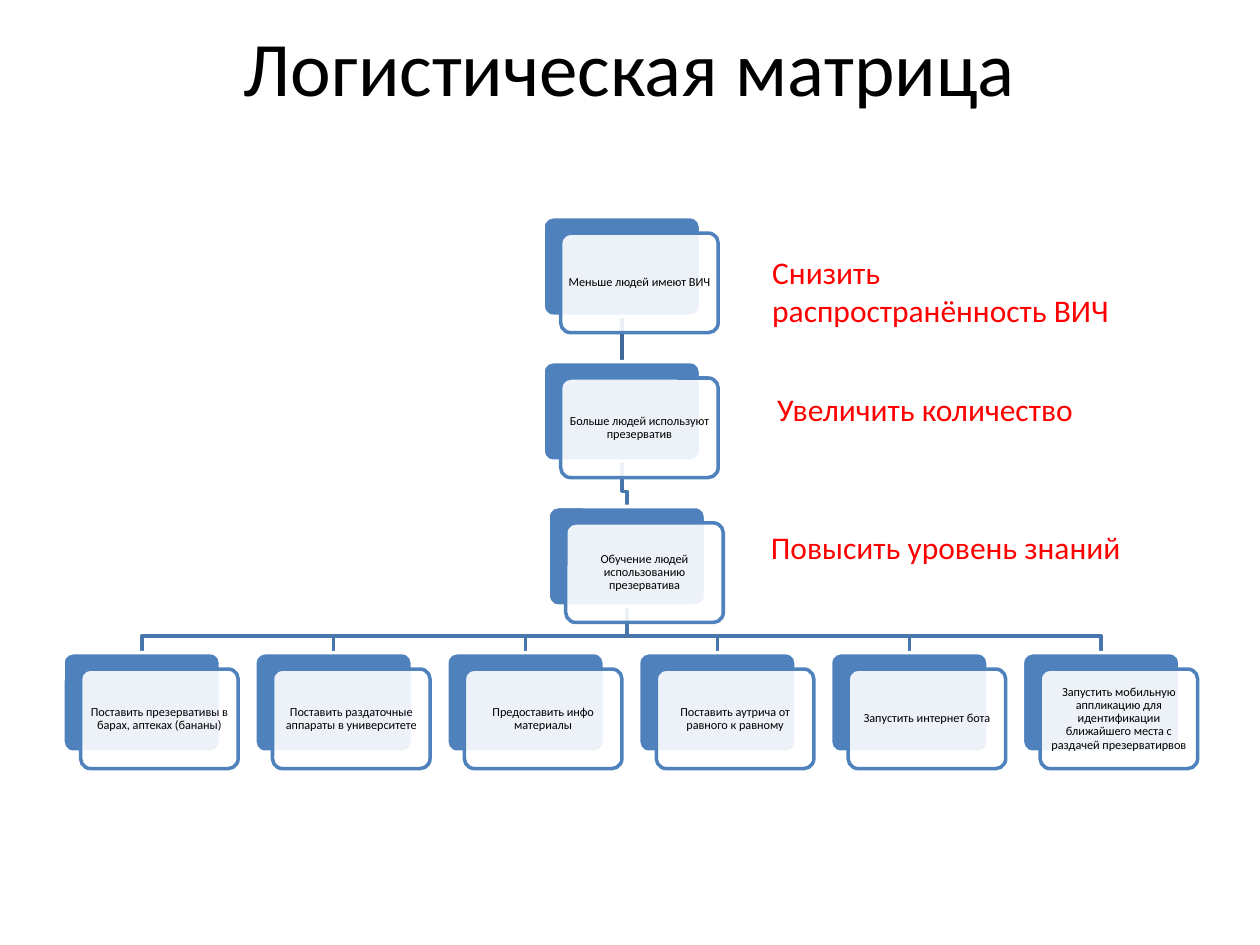
from lxml import etree
from pptx import Presentation
from pptx.dml.color import RGBColor
from pptx.enum import shapes as sh, text as tx
from pptx.oxml import ns
from pptx.util import Inches, Pt

COLORS = {"back": "4F81BD", "front": "FFFFFF", "elbow": "4875AC",
          "stem": "3F6797", "ink": "000000", "note": "FF0000"}
CARD_W, CARD_H = 1.25, 0.79
SHIFT_X, SHIFT_Y = 0.14, 0.13
LEVEL, STEP, DROP = 1.15, 1.523, 0.24

GOALS = [(4.31, "Меньше людей имеют ВИЧ"),
         (4.31, "Больше людей используют презерватив"),
         (4.35, "Обучение людей использованию презерватива")]
TASKS = ["Поставить презервативы в барах, аптеках (бананы)",
         "Поставить раздаточные аппараты в университете",
         "Предоставить инфо материалы",
         "Поставить аутрича от равного к равному",
         "Запустить интернет бота",
         "Запустить мобильную аппликацию для идентификации "
         "ближайшего места с раздачей презерватирвов"]
NOTES = [(6.03, 1.96, 0.71, "Снизить распространённость ВИЧ"),
         (6.07, 3.05, 0.4, "Увеличить количество"),
         (6.02, 4.14, 0.4, "Повысить уровень знаний")]


def color(name):
    return RGBColor.from_string(COLORS[name])


def assign(obj, vals):
    for key, val in vals.items():
        setattr(obj, key, val)


def write(shape, words, size, ink, align, frame):
    body = shape.text_frame
    body.text = words
    assign(body, {"word_wrap": True, **frame})
    para = body.paragraphs[0]
    para.alignment = align
    assign(para.font, {"name": "Calibri", "size": Pt(size)})
    para.font.color.rgb = color(ink)
    return para


def stroke(shape, ink):
    shape.line.color.rgb = color(ink)
    shape.line.width = Pt(2)


def title(slide, x, y, w, h):
    head = slide.shapes.title
    assign(head, {"left": Inches(x), "top": Inches(y),
                  "width": Inches(w), "height": Inches(h)})
    write(head, "Логистическая матрица", 44, "ink", tx.PP_ALIGN.CENTER,
          {"vertical_anchor": tx.MSO_ANCHOR.MIDDLE})


def panel(slide, x, y, fill, edge):
    box = slide.shapes.add_shape(
        sh.MSO_SHAPE.ROUNDED_RECTANGLE,
        Inches(x), Inches(y), Inches(CARD_W), Inches(CARD_H))
    box.adjustments[0] = 0.1
    box.shadow.inherit = False
    box.fill.solid()
    box.fill.fore_color.rgb = color(fill)
    stroke(box, edge)
    return box


def card(slide, x, y, words):
    """Draw a blue panel with a shifted, translucent text panel; return the blue one."""
    back = panel(slide, x, y, "back", "front")
    front = panel(slide, x + SHIFT_X, y + SHIFT_Y, "front", "back")
    tint = front.element.spPr.find(ns.qn("a:solidFill"))[0]
    etree.SubElement(tint, ns.qn("a:alpha"), val="90000")
    sides = ("left", "top", "right", "bottom")
    frame = {f"margin_{side}": Inches(0.03) for side in sides}
    para = write(front, words, 7, "ink", tx.PP_ALIGN.CENTER,
                 {"vertical_anchor": tx.MSO_ANCHOR.MIDDLE, **frame})
    para.line_spacing = 0.9
    return back


def lower(shape):
    """Send a link behind the cards."""
    shape.element.getparent().insert(2, shape.element)


def stem(slide, top, low):
    link = slide.shapes.add_connector(sh.MSO_CONNECTOR.STRAIGHT, 0, 0, 0, 0)
    link.begin_connect(top, 2)
    link.end_connect(low, 0)
    stroke(link, "stem")
    etree.SubElement(link.element.spPr, ns.qn("a:effectLst"))
    lower(link)


def elbow(slide, top, low):
    x1, y1 = top.left + top.width // 2, top.top + top.height
    x2, y2 = low.left + low.width // 2, low.top
    bend = y1 + Inches(DROP)
    pen = slide.shapes.build_freeform(x1, y1)
    pen.add_line_segments([(x1, bend), (x2, bend), (x2, y2)], close=False)
    link = pen.convert_to_shape()
    link.shadow.inherit = False
    link.fill.background()
    stroke(link, "elbow")
    lower(link)


def tree(slide, x, y):
    """Stack the goals from y down and spread the tasks from x below them."""
    goals = [card(slide, left, y + i * LEVEL, words)
             for i, (left, words) in enumerate(GOALS)]
    base = y + len(GOALS) * LEVEL + 0.01
    tasks = [card(slide, x + i * STEP, base, words)
             for i, words in enumerate(TASKS)]
    stem(slide, goals[0], goals[1])
    elbow(slide, goals[1], goals[2])
    for task in tasks:
        elbow(slide, goals[2], task)


def note(slide, x, y, w, h, words):
    box = slide.shapes.add_textbox(Inches(x), Inches(y), Inches(w), Inches(h))
    write(box, words, 18, "note", tx.PP_ALIGN.LEFT,
          {"auto_size": tx.MSO_AUTO_SIZE.SHAPE_TO_FIT_TEXT})


def main():
    deck = Presentation()
    assign(deck, {"slide_width": Inches(10), "slide_height": Inches(7.5)})
    slide = deck.slides.add_slide(deck.slide_layouts.get_by_name("Title Only"))
    title(slide, 0.5, -0.1, 9, 1.25)
    tree(slide, 0.5, 1.72)
    for x, y, h, words in NOTES:
        note(slide, x, y, 2.99, h, words)
    deck.save("out.pptx")


if __name__ == "__main__":
    main()
